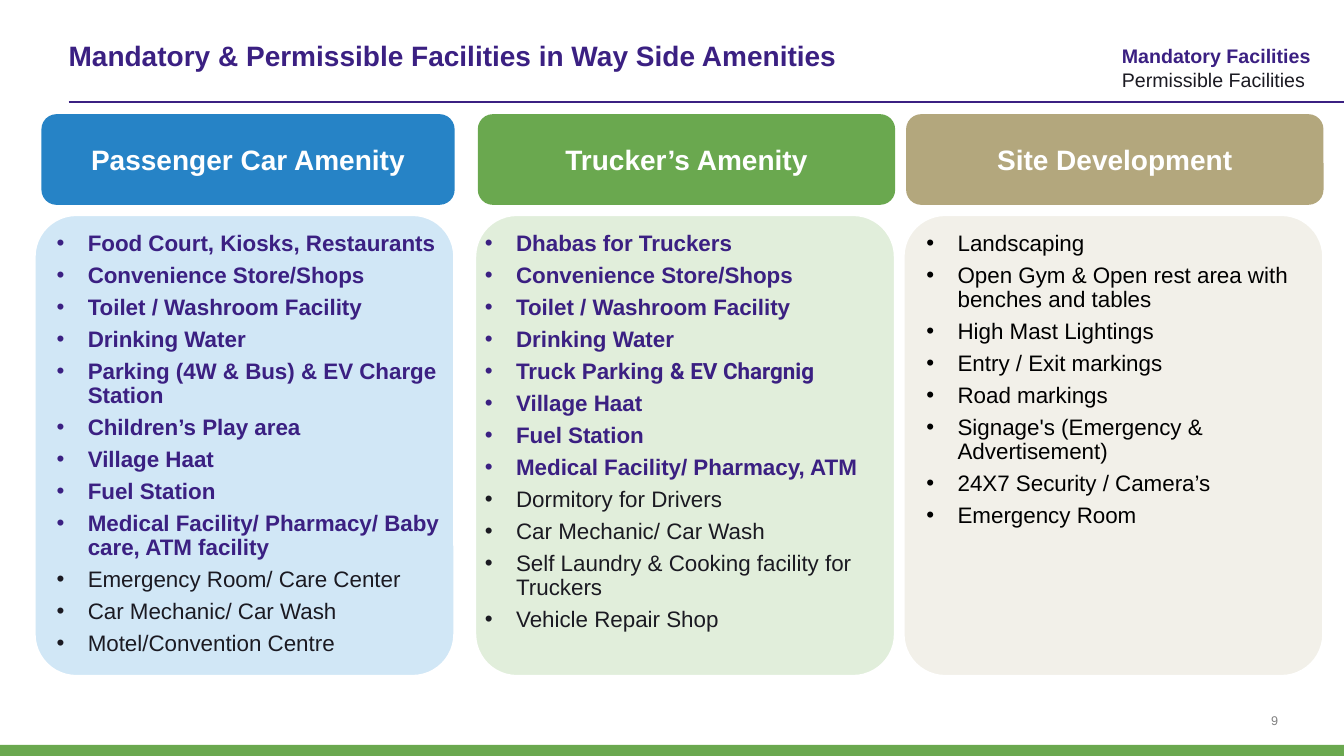
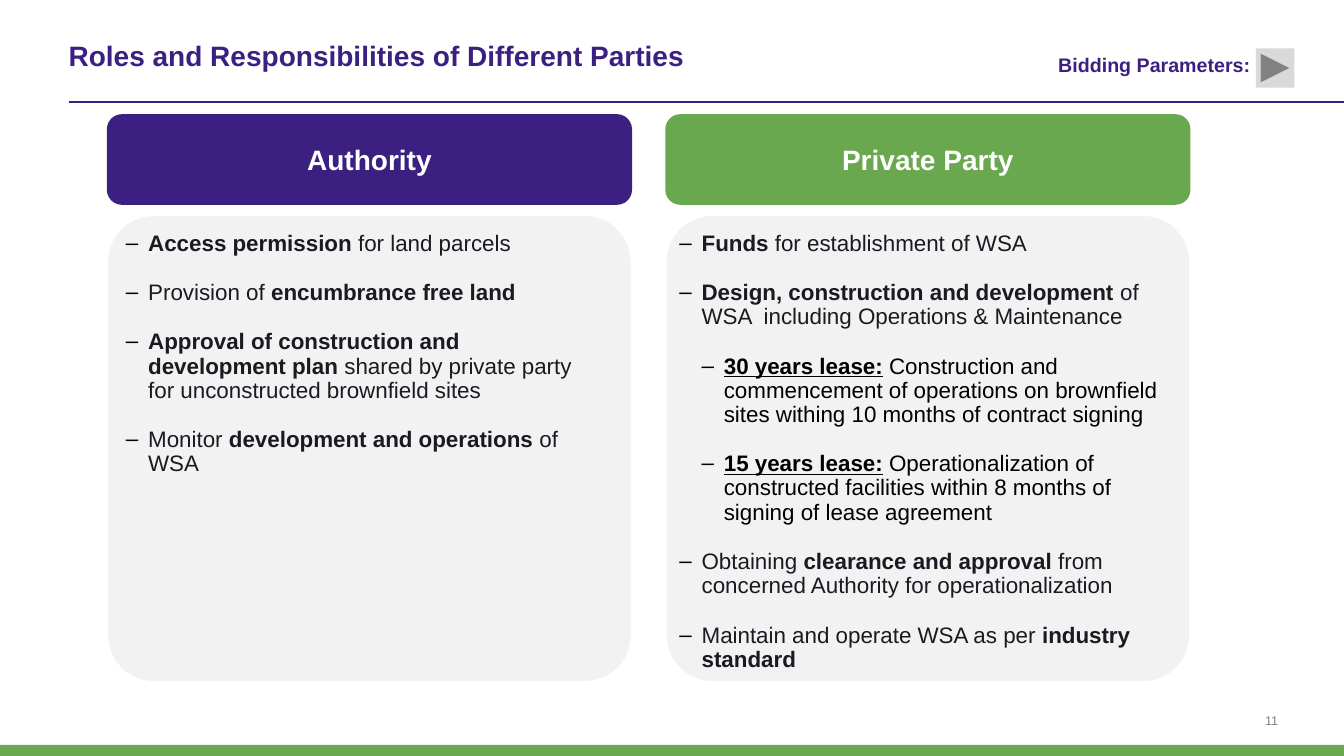
from dataclasses import dataclass

from lxml.etree import SubElement
from pptx import Presentation
from pptx.dml.color import RGBColor
from pptx.enum.shapes import MSO_CONNECTOR, MSO_SHAPE as SHAPE
from pptx.enum.text import MSO_ANCHOR as ANCHOR, MSO_AUTO_SIZE as AUTO, PP_ALIGN as ALIGN
from pptx.oxml.ns import qn
from pptx.util import Inches, Pt

PURPLE = RGBColor(0x3B, 0x20, 0x82)
GREEN = RGBColor(0x6A, 0xA8, 0x4F)
BLUE = RGBColor(0x26, 0x83, 0xC6)
SAND = RGBColor(0xB3, 0xA7, 0x7D)
PALE_GREEN = RGBColor(0xE1, 0xEE, 0xDB)
PALE_BLUE = RGBColor(0xD1, 0xE7, 0xF6)
PALE_SAND = RGBColor(0xD1, 0xCA, 0xB1)
PALE_GREY = RGBColor(0xF2, 0xF2, 0xF2)
BUTTON_GREY = RGBColor(0xD9, 0xD9, 0xD9)
GREY = RGBColor(0x80, 0x80, 0x80)
INK = RGBColor(0x1B, 0x1A, 0x22)
BLACK = RGBColor(0, 0, 0)
WHITE = RGBColor(0xFF, 0xFF, 0xFF)

COMPARISON, TWO_CONTENT = 4, 3
HEADER_TOP, HEADER_HEIGHT = 15.1, 12
CARD_TOP, LIST_OFFSET = 28.4, 1.33


@dataclass
class Run:
    text: str
    bold: bool = False
    underline: bool = False
    font: str = "Arial"


@dataclass
class Item:
    runs: list
    color: RGBColor = INK
    level: int = 1


@dataclass
class ListStyle:
    bullet: str
    indent: float
    before: float
    after: float
    bullet_color: RGBColor = None


@dataclass
class Column:
    """One header, card and list; lengths are percent of the slide width."""
    title: str
    x: float
    header_inset: float
    list_inset: float
    list_width: float
    header_fill: RGBColor
    card_fill: RGBColor
    items: list
    alpha: int = 100


DOTS = ListStyle("•", 0.31, 0, 5.6)
DASHES = ListStyle("–", 0.22, 6, 12, BLACK)


def plain(*texts, color=INK):
    return [Item([Run(t)], color) for t in texts]


def mandatory(*texts):
    return [Item([Run(t, True)], PURPLE) for t in texts]


def marked(text):
    """Item whose parts between asterisks are bold."""
    parts = enumerate(text.split("*"))
    return Item([Run(t, i % 2 == 1) for i, t in parts if t])


def lease(term, text):
    return Item([Run(term, True, True), Run(text)], BLACK, 2)


class Deck:
    """Shared style and the current slide; places are percent of its size."""

    def __init__(self):
        self.prs = Presentation()
        self.prs.slide_width, self.prs.slide_height = Inches(13.33), Inches(7.5)

    def box(self, x, y, w, h):
        sw, sh = self.prs.slide_width, self.prs.slide_height
        return [int(v * side / 100) for v, side in zip((x, y, w, h), (sw, sh) * 2)]

    def place(self, sp, *area):
        sp.left, sp.top, sp.width, sp.height = self.box(*area)

    def style(self, p, size, color, bold=False):
        for r in p.runs:
            f = r.font
            f.name, f.size, f.bold = "Arial", Pt(size), bold
            f.color.rgb = color

    def insets(self, tf, inches):
        side = Inches(inches)
        tf.margin_left = tf.margin_right = tf.margin_top = tf.margin_bottom = side

    def new_slide(self, layout, title, number):
        self.slide = self.prs.slides.add_slide(self.prs.slide_layouts[layout])
        self.shapes = self.slide.shapes
        self.bodies = [s for s in self.slide.placeholders
                       if s.placeholder_format.idx > 0]
        self.rule()
        self.shape(SHAPE.RECTANGLE, (0, 98.53, 100, 1.47), GREEN)
        self.label([(str(number), GREY, False)], (86.55, 93.73, 8.55, 2.53), 9,
                   ALIGN.RIGHT, ANCHOR.BOTTOM, 0)
        sp = self.shapes.title
        self.place(sp, 5.1, 1.6, 90.9, 11.47)
        tf = sp.text_frame
        tf.text = title
        tf.vertical_anchor, tf.auto_size = ANCHOR.MIDDLE, AUTO.NONE
        self.insets(tf, 0)
        tf.paragraphs[0].alignment = ALIGN.LEFT
        self.style(tf.paragraphs[0], 20, PURPLE, True)

    def rule(self):
        x, y, right, _ = self.box(5.1, 13.47, 100, 0)
        line = self.shapes.add_connector(MSO_CONNECTOR.STRAIGHT, x, y, right, y)
        line.line.color.rgb, line.line.width = PURPLE, Pt(1)
        SubElement(line._element.spPr, qn("a:effectLst"))

    def shape(self, kind, area, fill, alpha=100, border=None):
        sp = self.shapes.add_shape(kind, *self.box(*area))
        sp.shadow.inherit = False
        sp.fill.solid()
        sp.fill.fore_color.rgb = fill
        if alpha < 100:
            color = sp._element.spPr.find(qn("a:solidFill"))[0]
            SubElement(color, qn("a:alpha"), val=str(alpha * 1000))
        if border is None:
            sp.line.fill.background()
        else:
            sp.line.color.rgb, sp.line.width = border, Pt(2)
        return sp

    def label(self, lines, area, size=14, align=ALIGN.LEFT, anchor=ANCHOR.TOP,
              inset=None):
        tf = self.shapes.add_textbox(*self.box(*area)).text_frame
        tf.text = "\n".join(text for text, _, _ in lines)
        tf.vertical_anchor = anchor
        tf.word_wrap = inset is not None
        if inset is not None:
            self.insets(tf, inset)
        for p, (_, color, bold) in zip(tf.paragraphs, lines):
            p.alignment = align
            self.style(p, size, color, bold)

    def header(self, text, area, fill):
        tf = self.shape(SHAPE.ROUNDED_RECTANGLE, area, fill).text_frame
        tf.text = text
        tf.vertical_anchor = ANCHOR.MIDDLE
        tf.paragraphs[0].alignment = ALIGN.CENTER
        self.style(tf.paragraphs[0], 20, WHITE, True)

    def bullet(self, p, style, level):
        pPr = p._p.get_or_add_pPr()
        pPr.set("marL", str(Inches(style.indent * level)))
        pPr.set("indent", str(-Inches(style.indent)))
        if style.bullet_color is not None:
            color = SubElement(pPr, qn("a:buClr"))
            SubElement(color, qn("a:srgbClr"), val=str(style.bullet_color))
        SubElement(pPr, qn("a:buFont"), typeface="Arial")
        SubElement(pPr, qn("a:buChar"), char=style.bullet)

    def bullets(self, items, area, style):
        sp = self.bodies.pop(0)
        self.shapes._spTree.append(sp._element)  # in front of its card
        self.place(sp, *area)
        tf = sp.text_frame
        tf.word_wrap, tf.auto_size = True, AUTO.NONE
        tf.vertical_anchor = ANCHOR.TOP
        self.insets(tf, 0.07)
        for i, item in enumerate(items):
            p = tf.add_paragraph() if i else tf.paragraphs[0]
            self.bullet(p, style, item.level)
            p.alignment, p.line_spacing = ALIGN.LEFT, 0.9
            p.space_before = Pt(style.before if i else 0)
            p.space_after = Pt(style.after)
            for part in item.runs:
                r = p.add_run()
                r.text = part.text
                f = r.font
                f.name, f.size, f.bold = part.font, Pt(16), part.bold
                f.underline = part.underline
                f.color.rgb = item.color

    def columns(self, columns, width, height, style):
        for c in columns:
            self.header(c.title, (c.x + c.header_inset, HEADER_TOP,
                                  width - c.header_inset, HEADER_HEIGHT), c.header_fill)
            card = self.shape(SHAPE.ROUNDED_RECTANGLE, (c.x, CARD_TOP, width, height),
                              c.card_fill, c.alpha, WHITE)
            card.adjustments[0] = 0.1
            self.bullets(c.items, (c.x + c.list_inset, CARD_TOP + LIST_OFFSET,
                                   c.list_width, height - LIST_OFFSET), style)
        for sp in self.bodies:
            sp._element.getparent().remove(sp._element)


def facilities(deck):
    deck.new_slide(COMPARISON, "Mandatory & Permissible Facilities in Way Side Amenities", 9)
    car = mandatory(
        "Food Court, Kiosks, Restaurants", "Convenience Store/Shops",
        "Toilet / Washroom Facility", "Drinking Water",
        "Parking (4W & Bus) & EV Charge Station", "Children’s Play area",
        "Village Haat", "Fuel Station",
        "Medical Facility/ Pharmacy/ Baby care, ATM facility",
    ) + plain("Emergency Room/ Care Center", "Car Mechanic/ Car Wash",
              "Motel/Convention Centre")
    parking = Item([Run("Truck Parking ", True),
                    Run("& EV Chargnig", True, font="Roboto")], PURPLE)
    trucker = mandatory(
        "Dhabas for Truckers", "Convenience Store/Shops",
        "Toilet / Washroom Facility", "Drinking Water",
    ) + [parking] + mandatory(
        "Village Haat", "Fuel Station", "Medical Facility/ Pharmacy, ATM",
    ) + plain("Dormitory for Drivers", "Car Mechanic/ Car Wash",
              "Self Laundry & Cooking facility for Truckers", "Vehicle Repair Shop")
    site = plain(
        "Landscaping", "Open Gym & Open rest area with benches and tables",
        "High Mast Lightings", "Entry / Exit markings", "Road markings",
        "Signage's (Emergency & Advertisement)", "24X7 Security / Camera’s",
        "Emergency Room", color=BLACK)
    deck.columns([
        Column("Passenger Car Amenity", 2.55, 0.53, 1.13, 33.08, BLUE, PALE_BLUE, car),
        Column("Trucker’s Amenity", 35.33, 0.22, 0.22, 29.63, GREEN, PALE_GREEN, trucker),
        Column("Site Development", 67.2, 0.22, 1.2, 30.08, SAND, PALE_SAND, site, 27),
    ], 31.28, 61.07, DOTS)
    deck.label([("Mandatory Facilities", PURPLE, True),
                ("Permissible Facilities", INK, False)], (82.73, 5.2, 15.6, 7.6))


def responsibilities(deck):
    deck.new_slide(TWO_CONTENT, "Roles and Responsibilities of Different Parties", 11)
    authority = [
        marked("*Access permission* for land parcels"),
        marked("Provision of *encumbrance free land*"),
        marked("*Approval of construction and development plan *shared by private "
               "party for unconstructed brownfield sites"),
        marked("Monitor *development and operations *of WSA"),
    ]
    private = [
        marked("*Funds *for establishment of WSA"),
        marked("*Design, construction and development* of WSA  including "
               "Operations & Maintenance"),
        lease("30 years lease:", " Construction and commencement of operations on "
              "brownfield sites withing 10 months of contract signing"),
        lease("15 years lease:", " Operationalization of constructed facilities "
              "within 8 months of signing of lease agreement"),
        marked("Obtaining *clearance and approval *from concerned Authority for "
               "operationalization"),
        marked("Maintain and operate WSA as per *industry standard*"),
    ]
    deck.columns([
        Column("Authority", 7.95, 0, 0.9, 36.08, PURPLE, PALE_GREY, authority),
        Column("Private Party", 49.5, 0, 0.53, 37.5, GREEN, PALE_GREY, private),
    ], 39.08, 61.87, DASHES)
    deck.shape(SHAPE.ACTION_BUTTON_FORWARD_OR_NEXT, (93.45, 6.4, 2.85, 5.2), BUTTON_GREY)
    deck.label([("Bidding Parameters:", PURPLE, True)], (78, 6.4, 15.9, 4.53))


def main():
    deck = Deck()
    facilities(deck)
    responsibilities(deck)
    deck.prs.save("out.pptx")


if __name__ == "__main__":
    main()
